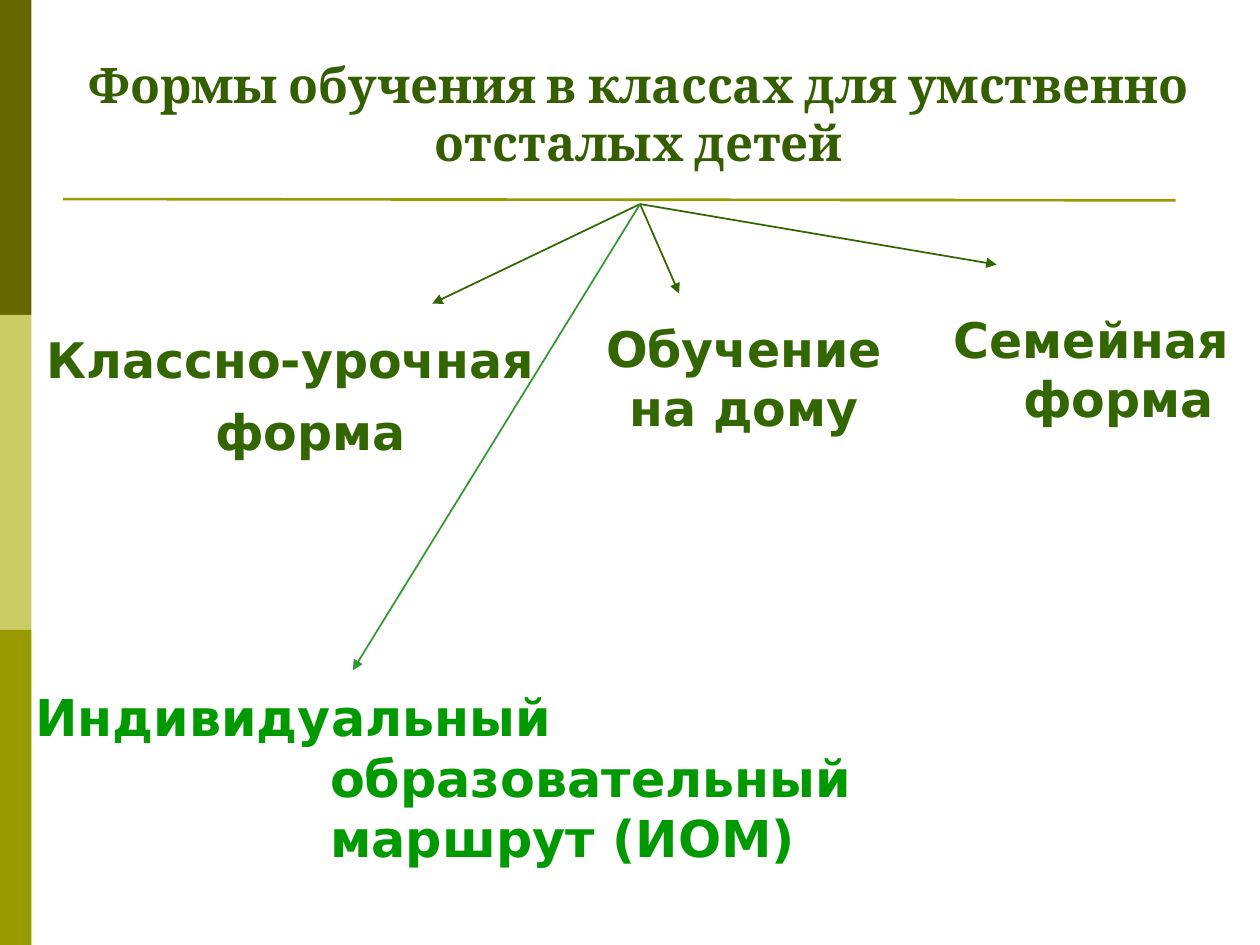
from lxml import etree
from pptx import Presentation
from pptx.dml.color import RGBColor
from pptx.enum import shapes, text
from pptx.oxml.ns import qn
from pptx.util import Inches, Pt

DARK_OLIVE = RGBColor(0x66, 0x66, 0x00)
PALE_OLIVE = RGBColor(0xCC, 0xCC, 0x66)
OLIVE = RGBColor(0x99, 0x99, 0x00)
TITLE_GREEN = RGBColor(0x35, 0x5E, 0x00)
FOREST = RGBColor(0x33, 0x66, 0x00)
LEAF = RGBColor(0x33, 0x99, 0x33)
BRIGHT_GREEN = RGBColor(0x00, 0x99, 0x00)

FORMS = [
    ("Классно-урочная форма", (0.36, 2.51, 3.92, 1.15),
     dict(margin=1.35, indent=-1.34, line_spacing=1.21)),
    ("Обучение на дому", (4.77, 2.52, 2.27, 0.96),
     dict(align=text.PP_ALIGN.CENTER)),
    ("Семейная форма", (7.55, 2.45, 2.23, 0.96),
     dict(margin=0.57, indent=-0.55)),
    ("Индивидуальный образовательный маршрут (ИОМ)", (0.27, 5.43, 8.25, 1),
     dict(margin=2.35, indent=-2.34, size=29, color=BRIGHT_GREEN)),
]
ARROW_START = (5.08, 1.62)
ARROW_ENDS = [
    ((5.39, 2.33), FOREST),
    ((3.43, 2.41), FOREST),
    ((7.91, 2.1), FOREST),
    ((2.8, 5.32), LEAF),
]


def add_text(slide, box, words, *, font="DejaVu Sans", size=28, color=FOREST,
             align=text.PP_ALIGN.LEFT, margin=0, indent=0, line_spacing=1):
    frame = slide.shapes.add_textbox(*map(Inches, box)).text_frame
    frame.word_wrap = True
    frame.margin_left = frame.margin_right = frame.margin_bottom = 0
    frame.margin_top = Inches(0.01)
    paragraph = frame.paragraphs[0]
    paragraph.alignment = align
    paragraph.space_before = Pt(1)
    paragraph.line_spacing = line_spacing
    properties = paragraph._p.get_or_add_pPr()
    properties.set("marL", str(Inches(margin)))
    properties.set("indent", str(Inches(indent)))
    run = paragraph.add_run()
    run.text = words
    run.font.name = font
    run.font.size = Pt(size)
    run.font.bold = True
    run.font.color.rgb = color


def add_line(slide, start, end, color, width, arrow=False):
    line = slide.shapes.add_connector(
        shapes.MSO_CONNECTOR.STRAIGHT, *map(Inches, (*start, *end)))
    line.line.color.rgb = color
    line.line.width = Pt(width)
    if arrow:
        etree.SubElement(line.line._get_or_add_ln(), qn("a:tailEnd"),
                         type="triangle", w="med", len="med")
    etree.SubElement(line._element.spPr, qn("a:effectLst"))


def add_side_bar(slide, box):
    left, top, width, height = box
    colors = (DARK_OLIVE, PALE_OLIVE, OLIVE)
    band_height = height / len(colors)
    for row, color in enumerate(colors):
        band = slide.shapes.add_shape(
            shapes.MSO_SHAPE.RECTANGLE,
            *map(Inches, (left, top + row * band_height, width, band_height)))
        band.shadow.inherit = False
        band.fill.solid()
        band.fill.fore_color.rgb = color
        band.line.fill.background()


def add_heading(slide, box):
    add_text(slide, box, "Формы обучения в классах для умственно отсталых детей",
             font="Cambria", color=TITLE_GREEN, align=text.PP_ALIGN.CENTER)
    left, top = box[:2]
    add_line(slide, (left + 0.08, top + 1.16), (left + 8.91, top + 1.17), OLIVE, 1.5)


def add_forms(slide):
    for words, box, layout in FORMS:
        add_text(slide, box, words, **layout)
    for end, color in ARROW_ENDS:
        add_line(slide, ARROW_START, end, color, 1, arrow=True)


def main():
    deck = Presentation()
    deck.slide_width, deck.slide_height = Inches(10), Inches(7.5)
    slide = deck.slides.add_slide(deck.slide_layouts[6])
    add_side_bar(slide, (0, 0, 0.25, 7.5))
    add_heading(slide, (0.42, 0.42, 9.3, 0.96))
    add_forms(slide)
    deck.save("out.pptx")


if __name__ == "__main__":
    main()
